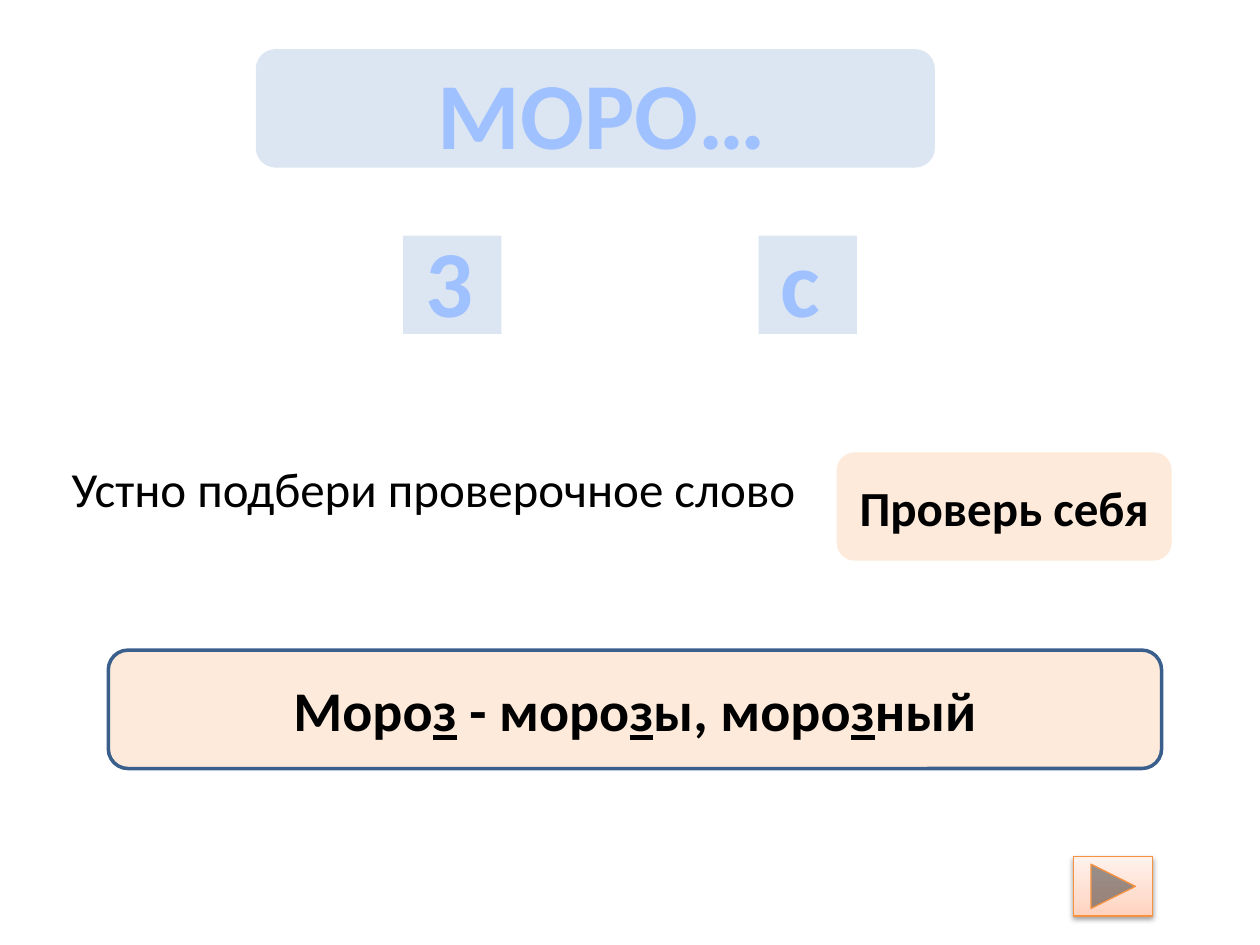
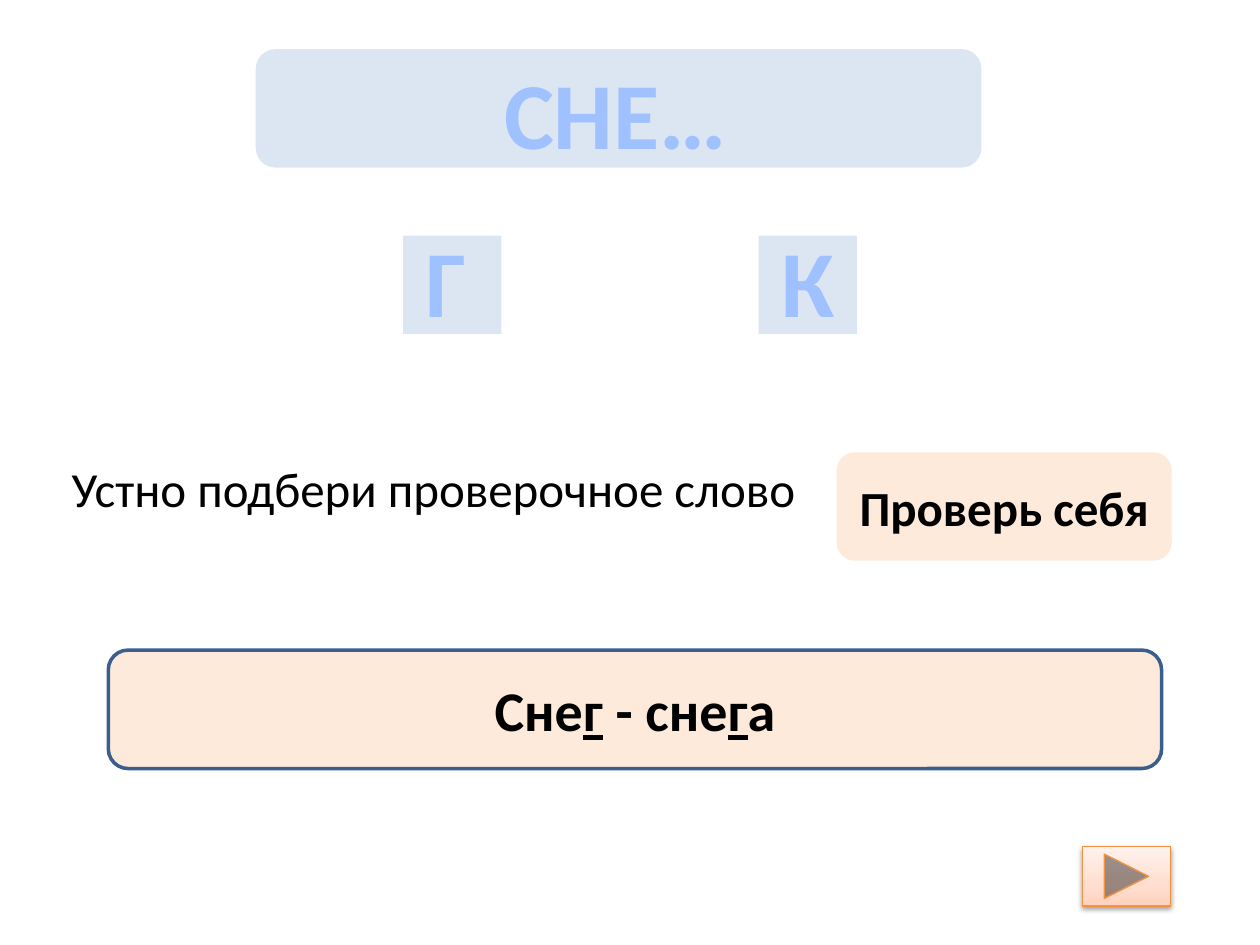
from dataclasses import dataclass

from lxml.etree import SubElement
from pptx import Presentation
from pptx.dml.color import RGBColor
from pptx.enum.shapes import MSO_SHAPE
from pptx.enum.text import MSO_ANCHOR, MSO_AUTO_SIZE, PP_ALIGN
from pptx.oxml import parse_xml
from pptx.oxml.ns import nsdecls, qn
from pptx.util import Inches, Pt

COLUMNS, ROWS = 100, 75
WIDTH, HEIGHT = Inches(10), Inches(7.5)


@dataclass(frozen=True)
class Theme:
    """Colours, type sizes and font shared by the slides."""

    font: str = "Calibri"
    ink: str = "000000"
    tile: str = "DCE6F2"
    card: str = "FDEADA"
    card_line: str = "3A5F8C"
    button_line: str = "F69240"
    letter_line: str = "467AB8"
    letter_stops: tuple = ((0, "BFD3F9"), (9, "A0C1FF"), (50, "003D85"),
                           (79, "A0C1FF"), (100, "BFD3F9"))
    button_stops: tuple = ((0, "FFD2BD"), (35, "FFDED0"), (100, "FFF2ED"))
    letter_size: int = 54
    answer_size: int = 32
    body_size: int = 28


THEME = Theme()


def place(column, row, columns, rows):
    """Turn grid cells into left, top, width and height."""
    across, down = WIDTH / COLUMNS, HEIGHT / ROWS
    return (round(column * across), round(row * down),
            round(columns * across), round(rows * down))


def gradient(stops, degrees):
    """Return a linear gradient fill element."""
    marks = "".join(f'<a:gs pos="{share * 1000}"><a:srgbClr val="{colour}"/></a:gs>'
                    for share, colour in stops)
    return parse_xml(f'<a:gradFill {nsdecls("a")}><a:gsLst>{marks}</a:gsLst>'
                     f'<a:lin ang="{degrees * 60000}" scaled="0"/></a:gradFill>')


def add_panel(shapes, kind, cells, fill=None, line=None, weight=1):
    """Add a preset shape with an optional plain fill and line."""
    panel = shapes.add_shape(kind, *place(*cells))
    panel.shadow.inherit = False
    if fill:
        panel.fill.solid()
        panel.fill.fore_color.rgb = RGBColor.from_string(fill)
    if line:
        panel.line.color.rgb = RGBColor.from_string(line)
        panel.line.width = Pt(weight)
    else:
        panel.line.fill.background()
    return panel


def style_span(span, size, bold):
    """Set the font of one run."""
    span.font.name = THEME.font
    span.font.size = Pt(size)
    span.font.bold = bold
    span.font.color.rgb = RGBColor.from_string(THEME.ink)


def add_text(shapes, cells, text, size, wrap=True):
    """Add a text box that grows with its text and return its paragraph."""
    box = shapes.add_textbox(*place(*cells))
    frame = box.text_frame
    frame.text = text
    frame.word_wrap = wrap
    frame.auto_size = MSO_AUTO_SIZE.SHAPE_TO_FIT_TEXT
    para = frame.paragraphs[0]
    style_span(para.runs[0], size, False)
    return para


def add_letters(shapes, cells, text, wrap=False):
    """Add large outlined letters with a gradient fill."""
    para = add_text(shapes, cells, text, THEME.letter_size, wrap)
    para.alignment = PP_ALIGN.CENTER
    span = para.runs[0]
    span.font.bold = True
    properties = span.font._element
    properties.remove(properties.find(qn("a:solidFill")))
    outline = parse_xml(f'<a:ln {nsdecls("a")} w="{Pt(0.83)}"><a:solidFill>'
                        f'<a:srgbClr val="{THEME.letter_line}"/></a:solidFill></a:ln>')
    properties.insert(0, outline)
    properties.insert(1, gradient(THEME.letter_stops, 90))


def add_choice(page, column, letter, letter_columns):
    """Add a grouped square tile with one letter to choose."""
    group = page.shapes.add_group_shape()
    add_panel(group.shapes, MSO_SHAPE.RECTANGLE, (column, 18.7, 7.8, 7.8), THEME.tile)
    add_letters(group.shapes, (column + 0.75, 17.2, letter_columns, 10.1), letter)


def add_card(page, cells, marked_text, size, line=None):
    """Add a rounded card; parts between underscores are underlined."""
    card = add_panel(page.shapes, MSO_SHAPE.ROUNDED_RECTANGLE, cells,
                     THEME.card, line, 2)
    card.text_frame.vertical_anchor = MSO_ANCHOR.MIDDLE
    para = card.text_frame.paragraphs[0]
    para.alignment = PP_ALIGN.CENTER
    for position, part in enumerate(marked_text.split("_")):
        span = para.add_run()
        span.text = part
        style_span(span, size, True)
        span.font.underline = position % 2 == 1


def add_next_button(page, cells):
    """Add the forward button with its gradient and soft shadow."""
    button = add_panel(page.shapes, MSO_SHAPE.ACTION_BUTTON_FORWARD_OR_NEXT, cells,
                       line=THEME.button_line, weight=0.75)
    properties = button._element.spPr
    properties.find(qn("a:prstGeom")).addnext(gradient(THEME.button_stops, 270))
    shadow = SubElement(properties.find(qn("a:effectLst")), qn("a:outerShdw"),
                        blurRad=str(Pt(3.1)), dist=str(Pt(1.6)),
                        dir="5400000", rotWithShape="0")
    colour = SubElement(shadow, qn("a:srgbClr"), val="000000")
    SubElement(colour, qn("a:alpha"), val="38000")


def add_exercise(deck, word, band_columns, word_cells, wrap, choices, answer, button_cells):
    """Add one spelling slide: word, two letters, task and answer."""
    page = deck.slides.add_slide(deck.slide_layouts[6])
    add_panel(page.shapes, MSO_SHAPE.ROUNDED_RECTANGLE,
              (20.3, 3.9, band_columns, 9.4), THEME.tile)
    add_letters(page.shapes, word_cells, word, wrap)
    for column, (letter, letter_columns) in zip((32, 60.2), choices):
        add_choice(page, column, letter, letter_columns)
    add_text(page.shapes, (4.7, 35.9, 60.9, 5.7),
             "Устно подбери проверочное слово", THEME.body_size)
    add_card(page, (66.4, 35.9, 26.6, 8.6), "Проверь себя", THEME.body_size)
    add_card(page, (8.6, 51.6, 83.6, 9.4), answer, THEME.answer_size, THEME.card_line)
    add_next_button(page, button_cells)


def main():
    """Build and save the deck."""
    deck = Presentation()
    deck.slide_width, deck.slide_height = WIDTH, HEIGHT
    add_exercise(deck, "МОРО…", 53.9, (33.6, 3.9, 28.3, 10.1), False,
                 (("3", 5.9), ("с", 5.2)),
                 "Моро_з_ - моро_з_ы, моро_з_ный", (85.2, 68, 6.3, 4.7))
    add_exercise(deck, "СНЕ…", 57.6, (22.7, 3.9, 52.3, 10.1), True,
                 (("Г", 5.3), ("К", 6.3)),
                 "Сне_г_ - сне_г_а", (85.9, 67.2, 7, 4.7))
    deck.save("out.pptx")


if __name__ == "__main__":
    main()
